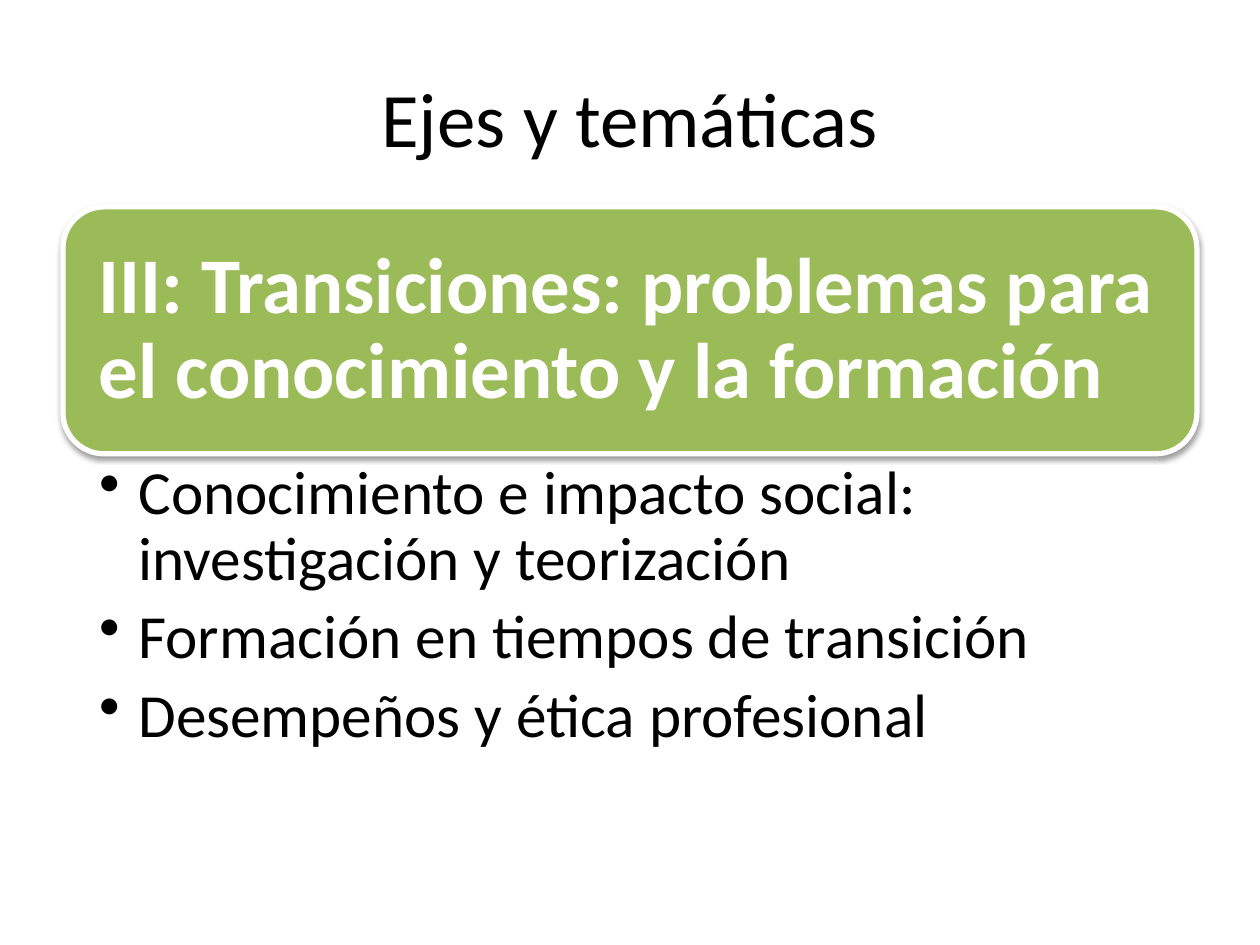
from lxml import etree
from pptx import Presentation
from pptx import util as u
from pptx.dml.color import RGBColor
from pptx.enum import shapes, text
from pptx.oxml import parse_xml
from pptx.oxml.ns import nsdecls, qn

# Content
TITLE = "Ejes y temáticas"
AXIS = "III: Transiciones: problemas para el conocimiento y la formación"
TOPICS = [
    "Conocimiento e impacto social: investigación y teorización",
    "Formación en tiempos de transición",
    "Desempeños y ética profesional",
]

# Style and layout (cm)
FONT = "Calibri"
BLACK = RGBColor(0x00, 0x00, 0x00)
WHITE = RGBColor(0xFF, 0xFF, 0xFF)
GREEN = RGBColor(0x9B, 0xBB, 0x59)
LEFT, WIDTH = 1.27, 22.86
BANNER_TOP, BANNER_HEIGHT = 4.17, 4.98
HANGING = u.Cm(0.79)


def set_frame(box, anchor, margins):
    frame = box.text_frame
    frame.word_wrap = True
    frame.vertical_anchor = anchor
    (frame.margin_left, frame.margin_top,
     frame.margin_right, frame.margin_bottom) = map(u.Cm, margins)
    return frame


def style(para, size, color, align, bold=False):
    para.alignment = align
    para.font.name = FONT
    para.font.size = u.Pt(size)
    para.font.bold = bold
    para.font.color.rgb = color


def add_bullet(para):
    props = para._p.get_or_add_pPr()
    props.set("marL", str(HANGING))
    props.set("indent", str(-HANGING))
    etree.SubElement(props, qn("a:buChar")).set("char", "•")


def add_shadow(shape):
    shape.shadow.inherit = False
    shape._element.spPr.find(qn("a:effectLst")).append(parse_xml(
        f'<a:outerShdw {nsdecls("a")} blurRad="{u.Pt(3.1)}" dist="{u.Pt(1.6)}" '
        'dir="5400000" rotWithShape="0"><a:srgbClr val="000000">'
        '<a:alpha val="38000"/></a:srgbClr></a:outerShdw>'))


deck = Presentation()
deck.slide_width, deck.slide_height = u.Cm(25.4), u.Cm(19.05)
page = deck.slides.add_slide(deck.slide_layouts[6])

# Title
title = page.shapes.add_textbox(u.Cm(LEFT), u.Cm(0.76), u.Cm(WIDTH), u.Cm(3.18))
frame = set_frame(title, text.MSO_ANCHOR.MIDDLE, (0.25, 0.13, 0.25, 0.13))
frame.text = TITLE
style(frame.paragraphs[0], 44, BLACK, text.PP_ALIGN.CENTER)

# Banner naming the axis
banner = page.shapes.add_shape(
    shapes.MSO_SHAPE.ROUNDED_RECTANGLE,
    u.Cm(LEFT), u.Cm(BANNER_TOP), u.Cm(WIDTH), u.Cm(BANNER_HEIGHT))
banner.fill.solid()
banner.fill.fore_color.rgb = GREEN
banner.line.color.rgb = WHITE
banner.line.width = u.Pt(3)
add_shadow(banner)
# The rounded corners add their own 0.24 cm inset
frame = set_frame(banner, text.MSO_ANCHOR.MIDDLE, (0.48, 0.48, 0.48, 0.48))
frame.text = AXIS
para = frame.paragraphs[0]
para.line_spacing = 0.9
style(para, 45, WHITE, text.PP_ALIGN.LEFT, bold=True)

# Topics below the banner
topics = page.shapes.add_textbox(
    u.Cm(LEFT), u.Cm(BANNER_TOP + BANNER_HEIGHT), u.Cm(WIDTH), u.Cm(6.48))
frame = set_frame(topics, text.MSO_ANCHOR.TOP, (0.73, 0.15, 0.89, 0.15))
for index, topic in enumerate(TOPICS):
    para = frame.add_paragraph() if index else frame.paragraphs[0]
    para.text = topic
    para.level = 1
    add_bullet(para)
    para.line_spacing = 0.9
    para.space_after = u.Pt(7)
    style(para, 35, BLACK, text.PP_ALIGN.LEFT)

deck.save("out.pptx")
